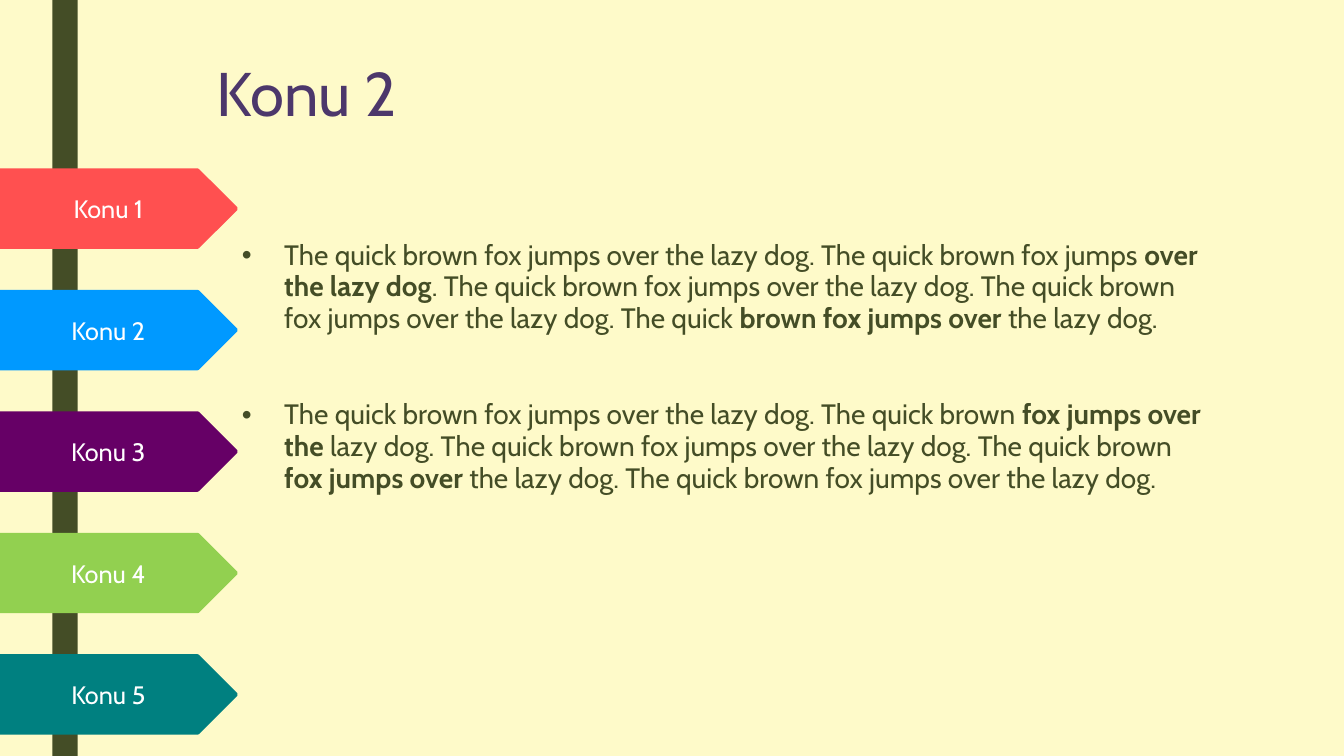
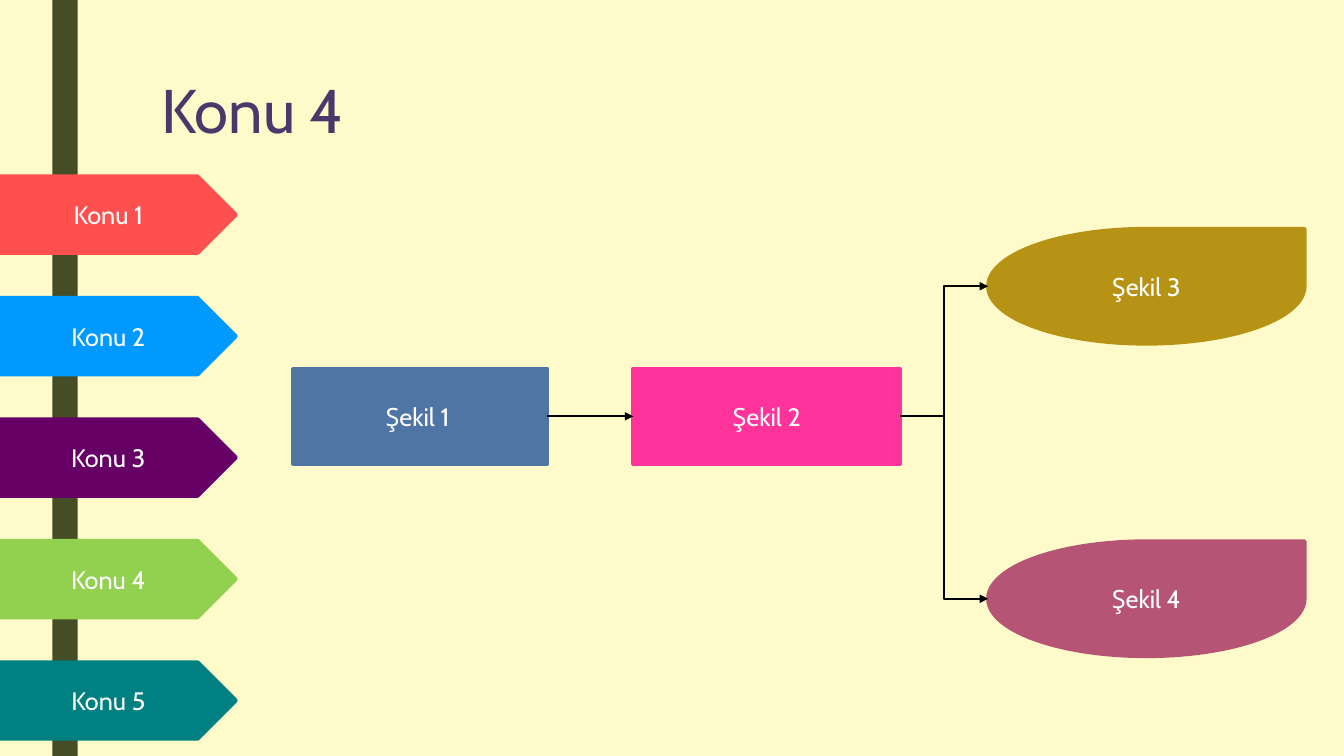
from dataclasses import dataclass

from lxml import etree
from pptx import Presentation
from pptx.dml.color import RGBColor
from pptx.enum.shapes import MSO_CONNECTOR as Link, MSO_SHAPE as Preset
from pptx.enum.text import MSO_ANCHOR as Anchor, PP_ALIGN as Align
from pptx.oxml.ns import qn
from pptx.util import Inches, Pt


@dataclass(frozen=True)
class Theme:
    font: str = "Cabin"
    paper: str = "FEFAC9"
    ink: str = "444D26"
    title: str = "4C376B"
    label: str = "FFFFFF"
    arrow: str = "000000"
    title_size: int = 44
    body_size: int = 20
    label_size: int = 18
    outline: float = 2.75
    arrow_width: float = 1.5


THEME = Theme()

# Content
TABS = [("Konu 1", "FF5050"), ("Konu 2", "0099FF"), ("Konu 3", "660066"),
        ("Konu 4", "92D050"), ("Konu 5", "008080")]
TAB_WIDTH, TAB_HEIGHT, TAB_SPAN = 2.34, 0.76, 4.82

# Each paragraph is a list of (text, bold)
BULLETS = [
    [("The quick brown fox jumps over the lazy dog. The quick brown fox jumps ", False),
     ("over the lazy dog", True),
     (". The quick brown fox jumps over the lazy dog. The quick brown fox jumps "
      "over the lazy dog. The quick ", False),
     ("brown fox jumps over ", True),
     ("the lazy dog.", False)],
    [("The quick brown fox jumps over the lazy dog. The quick brown ", False),
     ("fox jumps over the ", True),
     ("lazy dog. The quick brown fox jumps over the lazy dog. The quick brown ", False),
     ("fox jumps over ", True),
     ("the lazy dog. The quick brown fox jumps over the lazy dog.", False)],
]

# Label, preset, colour, (left, top, width, height)
NODES = [
    ("Şekil 1 ", Preset.RECTANGLE, "4E75A3", (2.91, 3.66, 2.52, 0.94)),
    ("Şekil 2", Preset.RECTANGLE, "FF3399", (6.28, 3.66, 2.65, 0.94)),
    ("Şekil 3", Preset.TEAR, "B79315", (9.8, 2.27, 3.14, 1.14)),
    ("Şekil 4", Preset.TEAR, "B55475", (9.8, 5.37, 3.14, 1.14)),
]
# From node, to node
ARROWS = [(0, 1), (1, 2), (1, 3)]


def style_span(span, size, color, bold=False):
    span.font.name = THEME.font
    span.font.size = Pt(size)
    span.font.bold = bold
    span.font.color.rgb = RGBColor.from_string(color)


def add_filled(shapes, preset, bounds, color, label=None):
    shape = shapes.add_shape(preset, *map(Inches, bounds))
    shape.shadow.inherit = False
    shape.fill.solid()
    shape.fill.fore_color.rgb = RGBColor.from_string(color)
    if label is None:
        shape.line.fill.background()
        return shape
    shape.line.color.rgb = RGBColor.from_string(color)
    shape.line.width = Pt(THEME.outline)
    shape.text_frame.text = label
    shape.text_frame.vertical_anchor = Anchor.MIDDLE
    para = shape.text_frame.paragraphs[0]
    para.alignment = Align.CENTER
    style_span(para.runs[0], THEME.label_size, THEME.label)
    return shape


def add_page(deck, title, bounds):
    page = deck.slides.add_slide(deck.slide_layouts[5])
    box = page.shapes.title
    box.left, box.top, box.width, box.height = map(Inches, bounds)
    box.text_frame.text = title
    box.text_frame.vertical_anchor = Anchor.TOP
    para = box.text_frame.paragraphs[0]
    para.alignment = Align.LEFT
    para.line_spacing = 0.89
    style_span(para.runs[0], THEME.title_size, THEME.title)
    return page


def add_tabs(page, top):
    group = page.shapes.add_group_shape()
    step = TAB_SPAN / (len(TABS) - 1)
    for index, (label, color) in enumerate(TABS):
        bounds = (0, top + index * step, TAB_WIDTH, TAB_HEIGHT)
        add_filled(group.shapes, Preset.PENTAGON, bounds, color, label)


def add_bullets(page, bounds):
    frame = page.shapes.add_textbox(*map(Inches, bounds)).text_frame
    frame.word_wrap = True
    for index, pieces in enumerate(BULLETS):
        para = frame.add_paragraph() if index else frame.paragraphs[0]
        para.line_spacing = 0.94
        para.space_before = Pt(44.5 if index else 10)
        para.space_after = Pt(2)
        for text, bold in pieces:
            span = para.add_run()
            span.text = text
            style_span(span, THEME.body_size, THEME.ink, bold)
        # Hanging bullet
        props = para._p.get_or_add_pPr()
        props.set("marL", str(Inches(0.42)))
        props.set("indent", str(-Inches(0.42)))
        etree.SubElement(props, qn("a:buFont"), typeface="Arial")
        etree.SubElement(props, qn("a:buChar"), char="•")


def add_arrow(page, source, target):
    straight = source.top == target.top
    arrow = page.shapes.add_connector(
        Link.STRAIGHT if straight else Link.ELBOW,
        source.left + source.width, source.top + source.height // 2,
        target.left, target.top + target.height // 2)
    arrow.begin_connect(source, 3)
    if straight:
        arrow.end_connect(target, 1)
    arrow.line.color.rgb = RGBColor.from_string(THEME.arrow)
    arrow.line.width = Pt(THEME.arrow_width)
    etree.SubElement(arrow.line._get_or_add_ln(), qn("a:tailEnd"), type="triangle")
    etree.SubElement(arrow._element.spPr, qn("a:effectLst"))


def main():
    deck = Presentation()
    deck.slide_width, deck.slide_height = Inches(13.33), Inches(7.5)
    background = deck.slide_master.background.fill
    background.solid()
    background.fore_color.rgb = RGBColor.from_string(THEME.paper)

    # Text slide
    page = add_page(deck, "Konu 2", (2.05, 0.58, 10.29, 1.53))
    # The vertical band belongs to the shared layout
    band = add_filled(page.shapes, Preset.RECTANGLE, (0.52, 0, 0.25, 7.5), THEME.ink)
    page.slide_layout.shapes.element.append(band.element)
    add_bullets(page, (2.3, 2.33, 9.78, 4.59))
    add_tabs(page, 1.69)

    # Diagram slide
    page = add_page(deck, "Konu 4", (1.5, 0.75, 10.5, 1.62))
    add_tabs(page, 1.75)
    nodes = [add_filled(page.shapes, preset, bounds, color, label)
             for label, preset, color, bounds in NODES]
    for source, target in ARROWS:
        add_arrow(page, nodes[source], nodes[target])

    deck.save("out.pptx")


if __name__ == "__main__":
    main()
